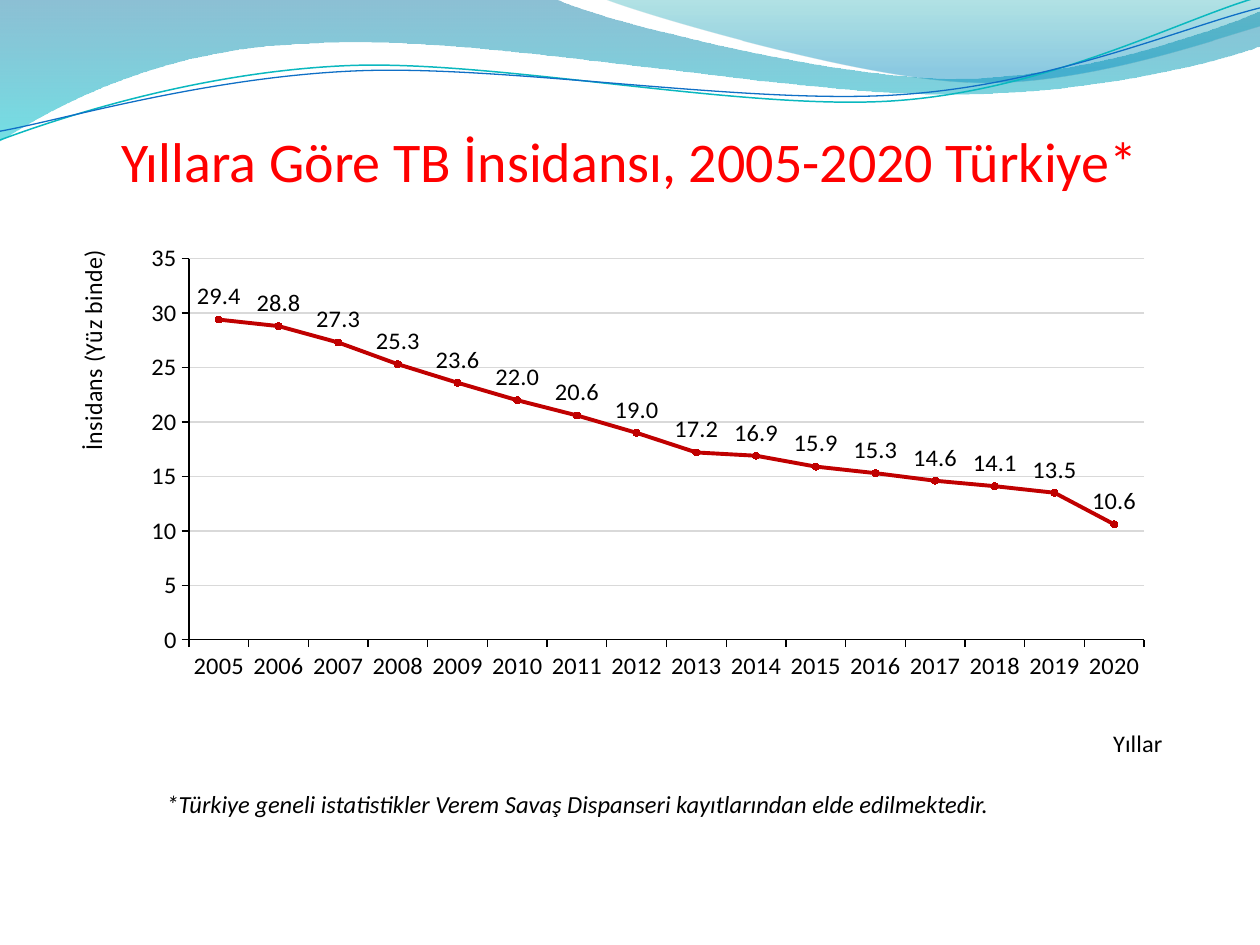
from dataclasses import dataclass
from math import cos, radians, sin

from lxml import etree
from pptx import Presentation
from pptx.chart.data import CategoryChartData
from pptx.dml.color import RGBColor as RGB
from pptx.enum.chart import XL_CHART_TYPE as CT, XL_LABEL_POSITION as LP
from pptx.enum.chart import XL_MARKER_STYLE as MS, XL_TICK_MARK as TM
from pptx.enum.text import MSO_ANCHOR as ANCHOR, MSO_AUTO_SIZE as AUTO, PP_ALIGN as ALIGN
from pptx.oxml.ns import qn
from pptx.util import Pt


@dataclass(frozen=True)
class Theme:
    font: str = "Calibri"
    title: RGB = RGB(0xFF, 0, 0)
    text: RGB = RGB(0, 0, 0)
    grid: RGB = RGB(0xD9, 0xD9, 0xD9)
    series: RGB = RGB(0xC0, 0, 0)
    teal: RGB = RGB(0x0A, 0xB8, 0xBF)
    blue: RGB = RGB(0x0F, 0x6F, 0xC6)
    title_size: int = 32
    body_size: int = 14


T = Theme()
TILT = -2.7
CHART_W, CHART_H = 632, 305

# Waves in points: a pair is a straight step, six numbers are a cubic curve
BAND = [(0, 0), (317, -0.7), (343, 12, 478, 45, 546, 45), (614, 45, 690, 19, 720, 6.5),
        (720.7, 26), (708, 32, 626, 55, 537, 54), (447, 54, 275, 20, 185, 24.5),
        (93, 26, 33, 60, -0.7, 81), (0, 0)]
CREST = [(345, -0.7), (366, 8, 491, 45, 554, 47), (616, 50, 692, 23, 720, 15),
         (720, 0), (345, -0.7)]
TEAL_LINE = [(0, 80), (35, 67, 114, 41, 199, 37.5), (284, 34, 427, 64, 513, 57.5),
             (600, 51, 675, 11, 718.5, -1.5)]
BLUE_LINE = [(0, 75), (34, 69, 118, 44, 204, 40.5), (290, 37, 430, 60.5, 516, 54),
             (602, 48, 677.5, 15, 720, 4.5)]

INCIDENCE = [29.4, 28.8, 27.3, 25.3, 23.6, 22.0, 20.6, 19.0,
             17.2, 16.9, 15.9, 15.3, 14.6, 14.1, 13.5, 10.6]


def set_format(obj, **values):
    for name, value in values.items():
        setattr(obj, name, value)


def format_font(font, size=T.body_size, color=T.text, **extra):
    set_format(font, name=T.font, size=Pt(size), bold=False, **extra)
    font.color.rgb = color


def format_line(line, color, width=0.75):
    line.color.rgb = color
    line.width = Pt(width)


def add_wave(s, steps, box, close, tilt=0):
    """Draw curved steps in a box of left, top, width, height, tilted about its centre."""
    left, top, width, height = box
    builder = s.shapes.build_freeform(0, 0, scale=1.0)
    builder.add_line_segments([(Pt(width), Pt(height))], close=close)
    sp = builder.convert_to_shape()
    set_format(sp, left=Pt(left), top=Pt(top), width=Pt(width), height=Pt(height),
               rotation=tilt)
    sp.shadow.inherit = False

    cx, cy = left + width / 2, top + height / 2
    c, n = cos(radians(-tilt)), sin(radians(-tilt))
    outline = next(sp._element.iter(qn("a:path")))
    for old in list(outline):
        outline.remove(old)
    for i, step in enumerate(steps):
        tag = "moveTo" if i == 0 else "lnTo" if len(step) == 2 else "cubicBezTo"
        node = etree.SubElement(outline, qn(f"a:{tag}"))
        for x, y in zip(step[::2], step[1::2]):
            dx, dy = x - cx, y - cy
            etree.SubElement(node, qn("a:pt"), x=str(int(Pt(dx * c - dy * n + width / 2))),
                             y=str(int(Pt(dx * n + dy * c + height / 2))))
    if close:
        etree.SubElement(outline, qn("a:close"))
    return sp


def add_filled_wave(s, steps, box, stops):
    sp = add_wave(s, steps, box, True)
    sp.line.fill.background()
    sp.fill.gradient()
    sp.fill.gradient_angle = 270
    for stop, (position, color, opacity) in zip(sp.fill.gradient_stops, stops):
        stop.position = position
        stop.color.rgb = RGB.from_string(color)
    for clr, (_, _, opacity) in zip(sp._element.spPr.iter(qn("a:srgbClr")), stops):
        etree.SubElement(clr, qn("a:alpha"), val=str(opacity * 1000))


def add_line_wave(s, steps, box, color, width):
    sp = add_wave(s, steps, box, False, TILT)
    sp.fill.background()
    format_line(sp.line, color, width)


def add_title(s, text):
    sp = s.shapes.title
    set_format(sp, left=Pt(33.5), top=Pt(65.5), width=Pt(653), height=Pt(45.5))
    tf = sp.text_frame
    set_format(tf, text=text, vertical_anchor=ANCHOR.BOTTOM, auto_size=AUTO.NONE,
               margin_left=0, margin_top=Pt(3.6), margin_right=0, margin_bottom=0)
    p = tf.paragraphs[0]
    p.alignment = ALIGN.CENTER
    format_font(p.runs[0].font, T.title_size, T.title)


def add_footnote(s, text):
    tf = s.shapes.add_textbox(Pt(88), Pt(445), Pt(489), Pt(26)).text_frame
    set_format(tf, text=text, word_wrap=False, auto_size=AUTO.SHAPE_TO_FIT_TEXT)
    p = tf.paragraphs[0]
    set_format(p, alignment=ALIGN.JUSTIFY, line_spacing=1.15)
    format_font(p.runs[0].font, italic=True)


def place(parent, index, x, y, **values):
    """Give a chart part a manual layout, from points within the chart."""
    for old in parent.findall(qn("c:layout")):
        parent.remove(old)
    layout = etree.Element(qn("c:layout"))
    manual = etree.SubElement(layout, qn("c:manualLayout"))
    if values:
        etree.SubElement(manual, qn("c:layoutTarget"), val="inner")
    for name in ("xMode", "yMode"):
        etree.SubElement(manual, qn(f"c:{name}"), val="edge")
    for name, value in {"x": x, "y": y, **values}.items():
        full = CHART_W if name in "xw" else CHART_H
        etree.SubElement(manual, qn(f"c:{name}"), val=str(value / full))
    parent.insert(index, layout)


def format_axis(axis, title, x, y):
    set_format(axis, major_tick_mark=TM.OUTSIDE, minor_tick_mark=TM.NONE)
    format_font(axis.tick_labels.font)
    format_line(axis.format.line, T.text)
    tf = axis.axis_title.text_frame
    tf.text = title
    format_font(tf.paragraphs[0].runs[0].font)
    place(axis.axis_title._element, 1, x, y)
    return tf


def add_incidence_chart(s):
    data = CategoryChartData(number_format="0.0")
    data.categories = [str(year) for year in range(2005, 2021)]
    data.add_series("Series 1", INCIDENCE)
    chart = s.shapes.add_chart(CT.LINE_MARKERS, Pt(35), Pt(133), Pt(CHART_W),
                               Pt(CHART_H), data).chart
    set_format(chart, has_legend=False, has_title=False)
    format_font(chart.font)
    place(chart._chartSpace.chart.plotArea, 0, 73.3, 15.25, w=548, h=224)

    # Axes
    format_axis(chart.category_axis, "Yıllar", 601, 288)
    axis = chart.value_axis
    body = format_axis(axis, "İnsidans (Yüz binde)", 5.8, 10.3)._txBody.bodyPr
    body.set("rot", "-5400000")
    body.set("vert", "horz")
    set_format(axis, minimum_scale=0, maximum_scale=35, major_unit=5)
    set_format(axis.tick_labels, number_format="0", number_format_is_linked=False)
    format_line(axis.major_gridlines.format.line, T.grid)

    # Series and value labels
    plot = chart.plots[0]
    plot.vary_by_categories = False
    series = plot.series[0]
    series.smooth = False
    format_line(series.format.line, T.series, 2.25)
    set_format(series.marker, style=MS.CIRCLE, size=4)
    series.marker.format.fill.solid()
    series.marker.format.fill.fore_color.rgb = T.series
    format_line(series.marker.format.line, T.series)
    labels = series.data_labels
    set_format(labels, show_value=True, position=LP.ABOVE, number_format="0.0",
               number_format_is_linked=False)
    format_font(labels.font)


def main():
    prs = Presentation()
    set_format(prs, slide_width=Pt(720), slide_height=Pt(540))
    s = prs.slides.add_slide(prs.slide_layouts[5])

    # Wave decoration
    add_filled_wave(s, BAND, (-0.7, -0.7, 721.4, 82), [(0, "0074A1", 45), (1, "00C6CF", 55)])
    add_filled_wave(s, CREST, (345, -0.7, 375, 50), [(0, "00A1A9", 30), (0.8, "008BBF", 45)])
    add_line_wave(s, TEAL_LINE, (-1.4, 15.8, 721.4, 51), T.teal, 0.85)
    add_line_wave(s, BLUE_LINE, (-1.4, 21.6, 722, 42), T.blue, 0.75)

    # Content
    add_title(s, "Yıllara Göre TB İnsidansı, 2005-2020 Türkiye*")
    add_footnote(s, "*Türkiye geneli istatistikler Verem Savaş Dispanseri "
                    "kayıtlarından elde edilmektedir.")
    add_incidence_chart(s)
    prs.save("out.pptx")


if __name__ == "__main__":
    main()
